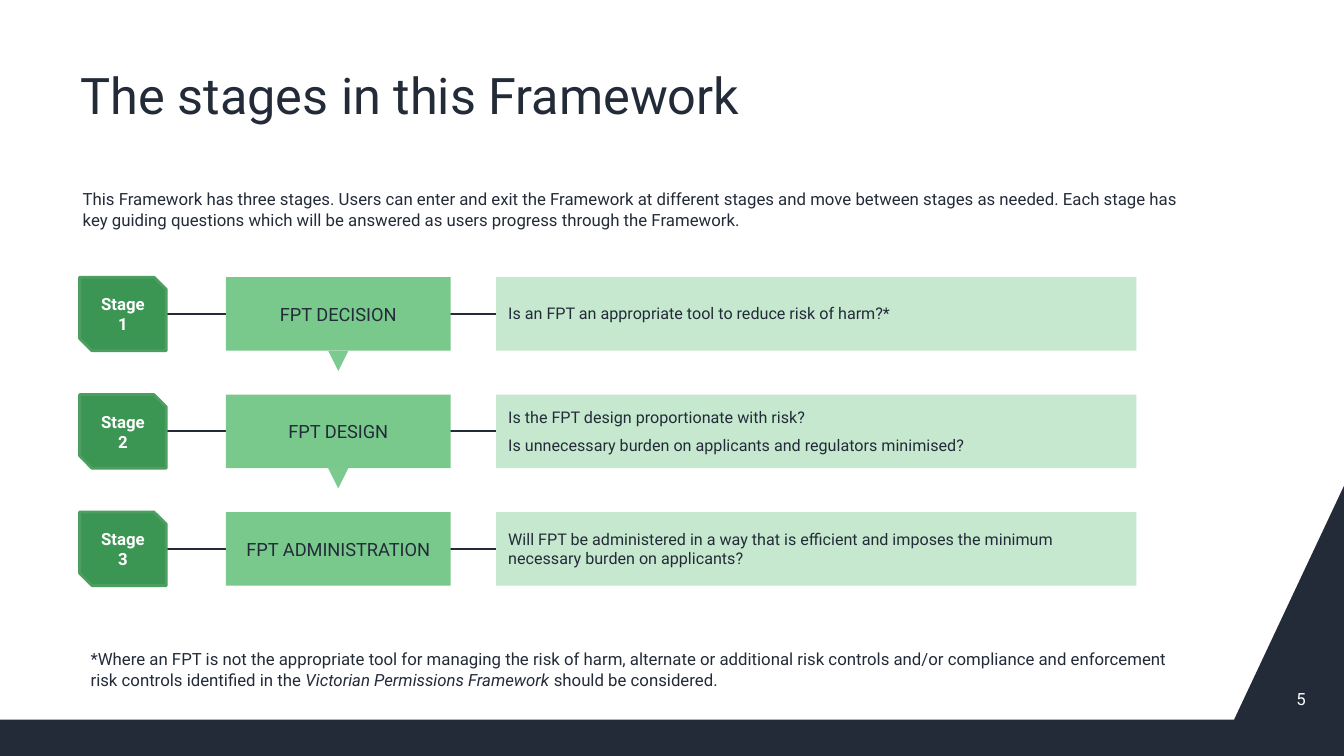
from lxml import etree
from pptx import Presentation
from pptx.dml.color import RGBColor
from pptx.enum.shapes import MSO_CONNECTOR, MSO_SHAPE
from pptx.enum.text import MSO_ANCHOR, PP_ALIGN
from pptx.oxml.ns import qn
from pptx.util import Inches, Pt

RECTANGLE = MSO_SHAPE.RECTANGLE
BADGE = MSO_SHAPE.SNIP_2_DIAG_RECTANGLE
TRIANGLE = MSO_SHAPE.ISOSCELES_TRIANGLE
STRAIGHT = MSO_CONNECTOR.STRAIGHT
TOP, MIDDLE, BOTTOM = MSO_ANCHOR.TOP, MSO_ANCHOR.MIDDLE, MSO_ANCHOR.BOTTOM
LEFT, CENTER, RIGHT = PP_ALIGN.LEFT, PP_ALIGN.CENTER, PP_ALIGN.RIGHT

FONT = "Roboto"
COLORS = {
    "navy": "232B39",
    "white": "FFFFFF",
    "badge": "3C9653",
    "badge_edge": "4C9E61",
    "stage": "79C98C",
    "pointer": "7CCA90",
    "question": "C6E8CE",
}
DEFAULT_INSETS = (0.1, 0.05, 0.1, 0.05)
PANEL_INSETS = (0.12, 0.04, 0.12, 0.05)
STAGE_INSETS = (0.1, 0, 0.1, 0)

FIRST_ROW_TOP = 2.75
ROW_PITCH = 1.165
ROW_HEIGHT = 0.73
BADGE_LEFT, BADGE_WIDTH = 0.79, 0.86
STAGE_LEFT, STAGE_WIDTH = 2.24, 2.23
QUESTION_LEFT, QUESTION_WIDTH = 4.92, 6.35
POINTER_SIZE = 0.2

INTRO = (
    "This Framework has three stages. Users can enter and exit the Framework at "
    "different stages and move between stages as needed. Each stage has key guiding "
    "questions which will be answered as users progress through the Framework."
)
FOOTNOTE = [
    "*Where an FPT is not the appropriate tool for managing the risk of harm, alternate "
    "or additional risk controls and/or compliance and enforcement risk controls "
    "identified in the ",
    "Victorian Permissions Framework ",
    "should be considered.",
]
STAGES = [
    ("FPT DECISION", ["Is an FPT an appropriate tool to reduce risk of harm?*"]),
    ("FPT DESIGN", [
        "Is the FPT design proportionate with risk?",
        "Is unnecessary burden on applicants and regulators minimised?",
    ]),
    ("FPT ADMINISTRATION", [
        "Will FPT be administered in a way that is efficient and imposes the minimum "
        "necessary burden on applicants?",
    ]),
]


def rgb(name):
    return RGBColor.from_string(COLORS[name])


def write(shape, paragraphs, size, color="navy", bold=False, align=LEFT, anchor=MIDDLE,
          insets=DEFAULT_INSETS, spacing=1.0, after=0):
    frame = shape.text_frame
    frame.word_wrap = True
    frame.vertical_anchor = anchor
    (frame.margin_left, frame.margin_top,
     frame.margin_right, frame.margin_bottom) = map(Inches, insets)
    for index, pieces in enumerate(paragraphs):
        paragraph = frame.add_paragraph() if index else frame.paragraphs[0]
        paragraph.alignment = align
        paragraph.line_spacing = spacing
        paragraph.space_after = Pt(after)
        for piece in pieces:
            run = paragraph.add_run()
            run.text = piece
            run.font.name = FONT
            run.font.size = Pt(size)
            run.font.bold = bold
            run.font.color.rgb = rgb(color)


def add_text(slide, box, paragraphs, size, **style):
    shape = slide.shapes.add_textbox(*map(Inches, box))
    write(shape, paragraphs, size, **style)
    return shape


def paint(shape, fill, edge=None):
    shape.shadow.inherit = False
    shape.fill.solid()
    shape.fill.fore_color.rgb = rgb(fill)
    if edge:
        shape.line.color.rgb = rgb(edge)
        shape.line.width = Pt(2)
    else:
        shape.line.fill.background()


def add_block(slide, kind, box, fill, edge=None):
    block = slide.shapes.add_shape(kind, *map(Inches, box))
    paint(block, fill, edge)
    return block


def add_link(slide, y):
    link = slide.shapes.add_connector(
        STRAIGHT, Inches(BADGE_LEFT + BADGE_WIDTH), Inches(y), Inches(QUESTION_LEFT), Inches(y))
    link.line.color.rgb = rgb("navy")
    link.line.width = Pt(1.5)
    etree.SubElement(link._element.spPr, qn("a:effectLst"))


def add_footer_band(slide):
    corners = [(0, 7.14), (12.24, 7.14), (13.33, 4.82), (13.33, 7.5), (0, 7.5)]
    points = [(Inches(x), Inches(y)) for x, y in corners]
    builder = slide.shapes.build_freeform(*points[0])
    builder.add_line_segments(points[1:], close=True)
    paint(builder.convert_to_shape(), "navy")


def add_stage(slide, number, title, questions):
    top = FIRST_ROW_TOP + (number - 1) * ROW_PITCH
    add_link(slide, top + ROW_HEIGHT / 2)

    question_panel = add_block(
        slide, RECTANGLE, (QUESTION_LEFT, top, QUESTION_WIDTH, ROW_HEIGHT), "question")
    write(question_panel, [[question] for question in questions], 11.5,
          insets=PANEL_INSETS, after=6)

    stage_panel = add_block(
        slide, RECTANGLE, (STAGE_LEFT, top, STAGE_WIDTH, ROW_HEIGHT), "stage")
    write(stage_panel, [[title]], 13, align=CENTER, insets=STAGE_INSETS, after=6)

    badge = add_block(
        slide, BADGE, (BADGE_LEFT, top, BADGE_WIDTH, ROW_HEIGHT), "badge", "badge_edge")
    write(badge, [[f"Stage {number}"]], 12, color="white", bold=True, align=CENTER)

    if number < len(STAGES):
        pointer_left = STAGE_LEFT + (STAGE_WIDTH - POINTER_SIZE) / 2
        pointer = add_block(
            slide, TRIANGLE, (pointer_left, top + ROW_HEIGHT, POINTER_SIZE, POINTER_SIZE),
            "pointer")
        pointer.rotation = 180


def main():
    deck = Presentation()
    deck.slide_width, deck.slide_height = Inches(13.33), Inches(7.5)
    slide = deck.slides.add_slide(deck.slide_layouts[6])

    add_footer_band(slide)
    add_text(slide, (0.76, 0.16, 11.43, 1.13), [["The stages in this Framework"]], 36,
             anchor=BOTTOM, insets=(0.04, 0.05, 0.04, 0.05), spacing=0.9)
    intro = add_block(slide, RECTANGLE, (0.7, 1.78, 11.29, 0.59), "white")
    write(intro, [[INTRO]], 12, insets=PANEL_INSETS, spacing=1.05, after=6)

    for number, (title, questions) in enumerate(STAGES, start=1):
        add_stage(slide, number, title, questions)

    footnote = add_text(slide, (0.8, 6.38, 10.91, 0.52), [FOOTNOTE], 12,
                        anchor=TOP, spacing=1.05, after=9)
    footnote.text_frame.paragraphs[0].runs[1].font.italic = True
    add_text(slide, (12.57, 6.73, 0.48, 0.4), [["5"]], 12, color="white", align=RIGHT)

    deck.save("out.pptx")


if __name__ == "__main__":
    main()
